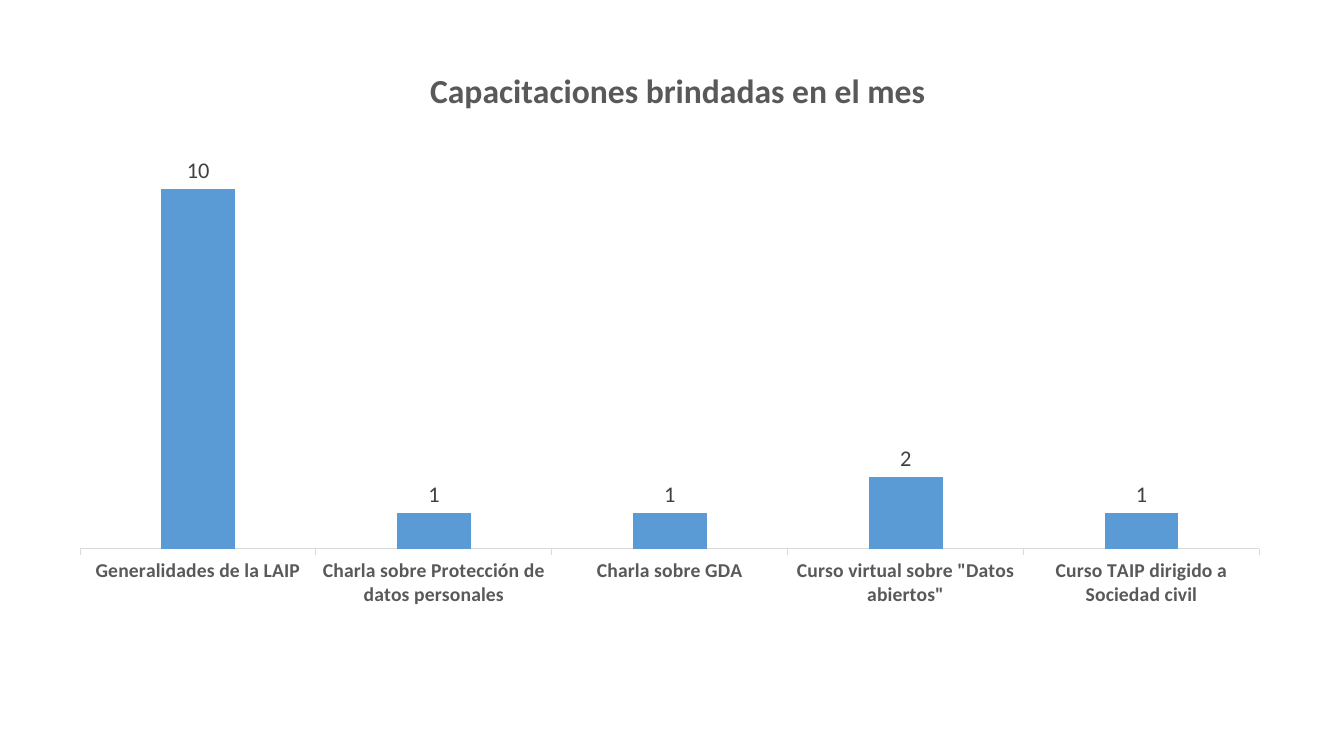
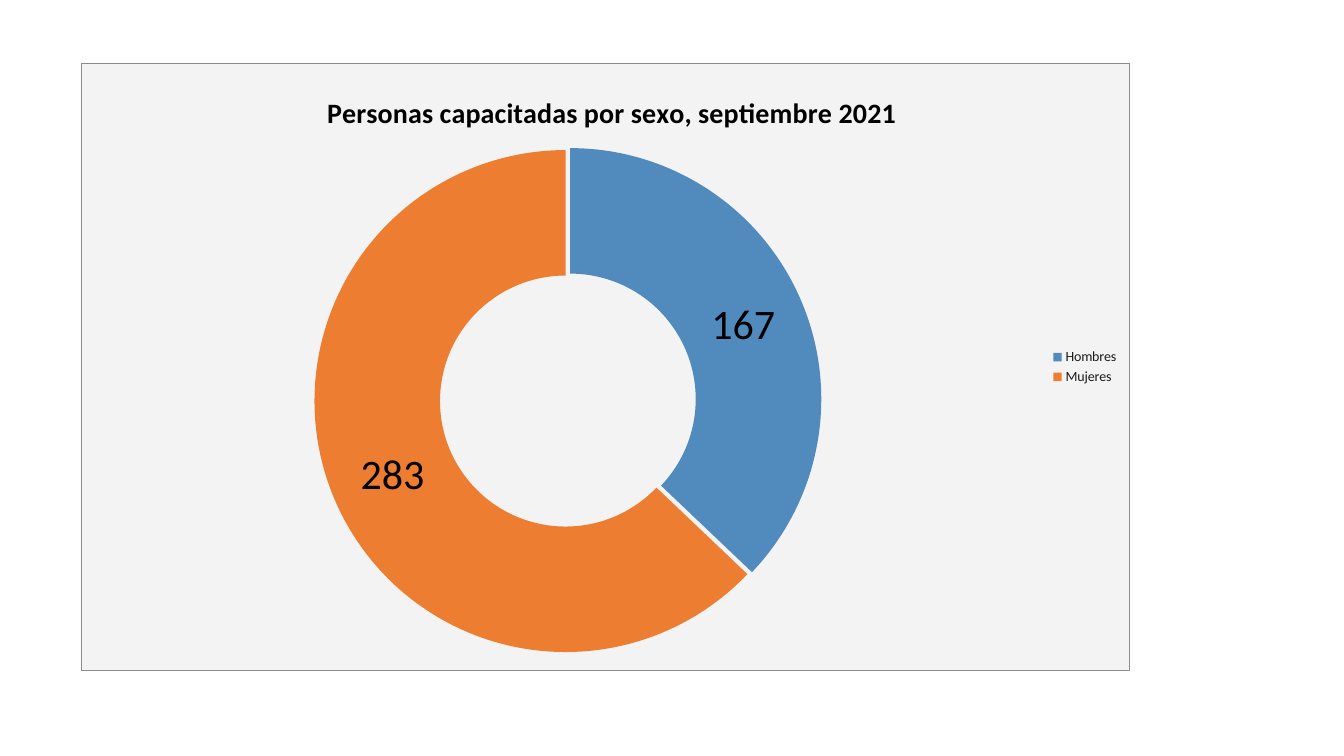
"""Build two slides with the monthly training charts."""
from lxml.etree import SubElement
from pptx import Presentation
from pptx.chart.data import CategoryChartData
from pptx.dml.color import RGBColor
from pptx.enum.chart import XL_CHART_TYPE, XL_LABEL_POSITION, XL_LEGEND_POSITION, XL_TICK_MARK
from pptx.oxml import parse_xml
from pptx.oxml.ns import nsdecls, qn
from pptx.util import Cm, Pt

FONT = "Calibri"
BLACK = RGBColor(0x00, 0x00, 0x00)
GRAY = RGBColor(0x59, 0x59, 0x59)
LABEL_GRAY = RGBColor(0x40, 0x40, 0x40)
LEGEND_GRAY = RGBColor(0x1A, 0x1A, 0x1A)
AXIS_GRAY = RGBColor(0xD9, 0xD9, 0xD9)
BAR_BLUE = RGBColor(0x5B, 0x9B, 0xD5)
MEN_BLUE = RGBColor(0x51, 0x8A, 0xBD)
WOMEN_ORANGE = RGBColor(0xED, 0x7D, 0x31)


def style_font(font, size, color, bold=False):
    font.name = FONT
    font.size = Pt(size)
    font.color.rgb = color
    font.bold = bold


def set_layout(parent, index, **values):
    for old in parent.findall(qn("c:layout")):
        parent.remove(old)
    layout = parse_xml(f"<c:layout {nsdecls('c')}><c:manualLayout/></c:layout>")
    for tag, value in values.items():
        SubElement(layout[0], qn(f"c:{tag}")).set("val", str(value))
    parent.insert(index, layout)


prs = Presentation()
prs.slide_width, prs.slide_height = Cm(33.87), Cm(19.05)

charts = []
for kind, box, cats, vals, title, size, color, title_at, plot_at in [
    (XL_CHART_TYPE.COLUMN_CLUSTERED, (1.4, 0.97, 30.96, 14.66),
     ["Generalidades de la LAIP", "Charla sobre Protección de datos personales",
      "Charla sobre GDA", 'Curso virtual sobre "Datos abiertos"',
      "Curso TAIP dirigido a Sociedad civil"],
     [10, 1, 1, 2, 1], "Capacitaciones brindadas en el mes", 24, GRAY,
     (0.3, 0.04), (0.02, 0.135, 0.96, 0.742)),
    (XL_CHART_TYPE.DOUGHNUT, (2.03, 1.59, 26.44, 15.32),
     ["Hombres", "Mujeres"], [167, 283],
     "Personas capacitadas por sexo, septiembre 2021", 20, BLACK,
     (0.23, 0.04), (0.225, 0.141, 0.479, 0.827)),
]:
    s = prs.slides.add_slide(prs.slide_layouts[6])
    data = CategoryChartData()
    data.categories = cats
    data.add_series("Series 1", vals)
    chart = s.shapes.add_chart(kind, *map(Cm, box), data).chart
    style_font(chart.font, 10, BLACK)
    tf = chart.chart_title.text_frame
    tf.text = title
    style_font(tf.paragraphs[0].runs[0].font, size, color, True)
    chart.chart_title.include_in_layout = False
    set_layout(tf._txBody.getparent().getparent(), 1,
               xMode="edge", yMode="edge", x=title_at[0], y=title_at[1])
    x, y, w, h = plot_at
    set_layout(chart._chartSpace.chart.plotArea, 0, layoutTarget="inner",
               xMode="edge", yMode="edge", x=x, y=y, w=w, h=h)
    chart.plots[0].has_data_labels = True
    chart.plots[0].data_labels.show_value = True
    chart.plots[0].data_labels.show_percentage = False
    charts.append(chart)

bars, ring = charts

bars.has_legend = False
plot = bars.plots[0]
plot.vary_by_categories = False
plot.gap_width, plot.overlap = 219, -27
plot.series[0].format.fill.solid()
plot.series[0].format.fill.fore_color.rgb = BAR_BLUE
plot.data_labels.position = XL_LABEL_POSITION.OUTSIDE_END
style_font(plot.data_labels.font, 16, LABEL_GRAY)
axis = bars.category_axis
axis.major_tick_mark = XL_TICK_MARK.OUTSIDE
axis.format.line.color.rgb = AXIS_GRAY
axis.format.line.width = Pt(0.75)
style_font(axis.tick_labels.font, 14, GRAY, True)
axis = bars.value_axis
axis.visible = False
axis.has_major_gridlines = False
axis.minimum_scale, axis.maximum_scale = 0, 12

style_font(ring.plots[0].data_labels.font, 30, BLACK)
for i, color in enumerate([MEN_BLUE, WOMEN_ORANGE]):
    fill = ring.plots[0].series[0].points[i].format.fill
    fill.solid()
    fill.fore_color.rgb = color
for sp in ring._chartSpace.iterfind(f".//{qn('c:dPt')}/{qn('c:spPr')}"):
    sp.addprevious(parse_xml(f'<c:explosion {nsdecls("c")} val="2"/>'))
ring.has_legend = True
ring.legend.position = XL_LEGEND_POSITION.RIGHT
ring.legend.include_in_layout = False
style_font(ring.legend.font, 10, LEGEND_GRAY)
ring._chartSpace.chart.addnext(parse_xml(
    f'<c:spPr {nsdecls("c", "a")}><a:solidFill><a:srgbClr val="F3F3F3"/></a:solidFill>'
    '<a:ln w="6350"><a:solidFill><a:srgbClr val="8C8C8C"/></a:solidFill></a:ln></c:spPr>'))

prs.save("out.pptx")
